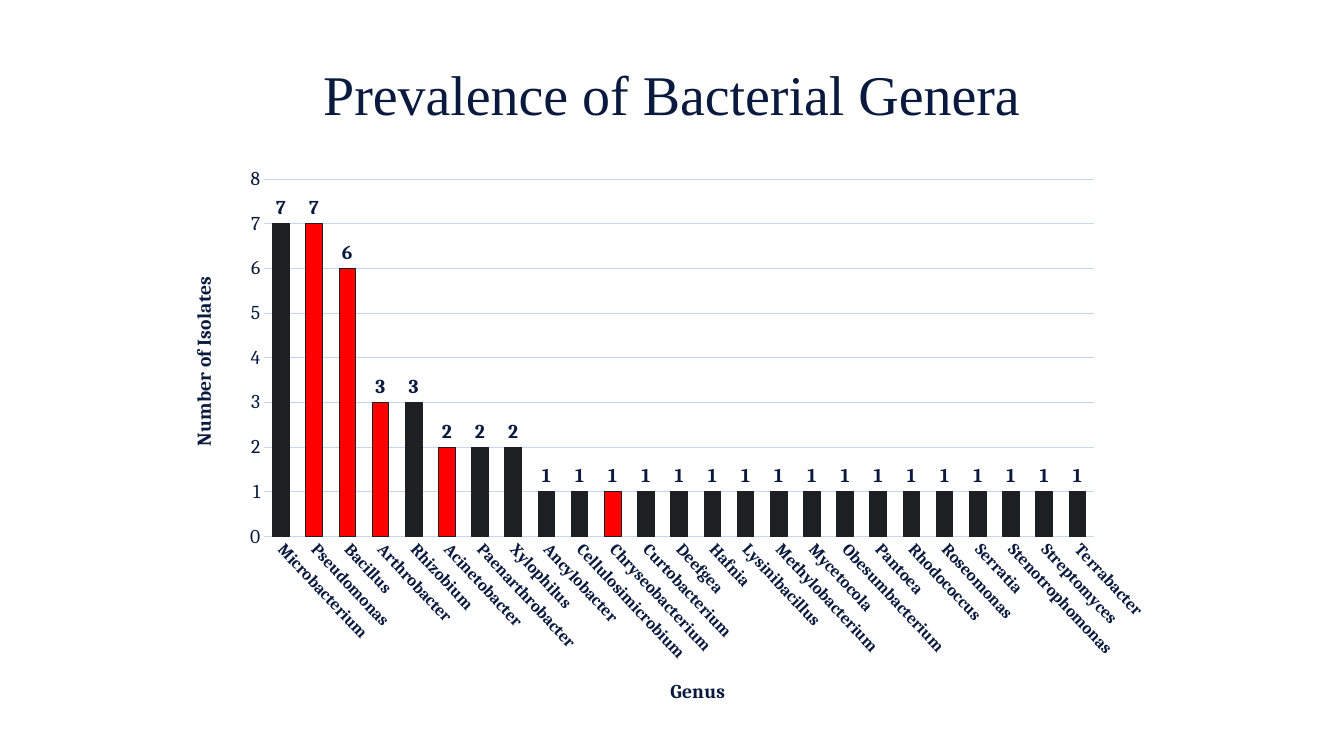
from dataclasses import dataclass

from lxml import etree
from pptx import Presentation
from pptx.chart.axis import CategoryAxis, ValueAxis
from pptx.chart.chart import Chart
from pptx.chart.data import CategoryChartData
from pptx.dml.color import RGBColor
from pptx.enum.chart import XL_CHART_TYPE, XL_LABEL_POSITION, XL_TICK_MARK
from pptx.enum.text import MSO_ANCHOR, PP_ALIGN
from pptx.oxml.ns import qn
from pptx.slide import Slide
from pptx.text.text import Font
from pptx.util import Cm, Pt

COLUMN_CLUSTERED = XL_CHART_TYPE.COLUMN_CLUSTERED
OUTSIDE_END = XL_LABEL_POSITION.OUTSIDE_END
NO_TICK = XL_TICK_MARK.NONE
MIDDLE = MSO_ANCHOR.MIDDLE
CENTER = PP_ALIGN.CENTER

COLORS = {"navy": "0A193E", "grid": "C6D4F6", "bar": "1E1F21", "highlight": "FF0000"}
LABEL_ROTATION = "2820000"  # 47 degrees clockwise


@dataclass(frozen=True)
class Genus:
    name: str
    isolates: int = 1
    highlighted: bool = False


GENERA = [
    Genus("Microbacterium", 7),
    Genus("Pseudomonas", 7, True),
    Genus("Bacillus", 6, True),
    Genus("Arthrobacter", 3, True),
    Genus("Rhizobium", 3),
    Genus("Acinetobacter", 2, True),
    Genus("Paenarthrobacter", 2),
    Genus("Xylophilus", 2),
    Genus("Ancylobacter"),
    Genus("Cellulosimicrobium"),
    Genus("Chryseobacterium", highlighted=True),
    Genus("Curtobacterium"),
    Genus("Deefgea"),
    Genus("Hafnia"),
    Genus("Lysinibacillus"),
    Genus("Methylobacterium"),
    Genus("Mycetocola"),
    Genus("Obesumbacterium"),
    Genus("Pantoea"),
    Genus("Rhodococcus"),
    Genus("Roseomonas"),
    Genus("Serratia"),
    Genus("Stenotrophomonas"),
    Genus("Streptomyces"),
    Genus("Terrabacter"),
]


def color(name: str) -> RGBColor:
    return RGBColor.from_string(COLORS[name])


def style_font(font: Font, size: float, bold: bool = False, name: str = "Cambria") -> None:
    font.name = name
    font.size = Pt(size)
    font.bold = bold
    font.color.rgb = color("navy")


def set_layout(parent: etree._Element, index: int, **fractions: float) -> None:
    """Place a chart part by fractions of the chart area."""
    for old_layout in parent.findall(qn("c:layout")):
        parent.remove(old_layout)
    layout = parent.makeelement(qn("c:layout"))
    manual = etree.SubElement(layout, qn("c:manualLayout"))
    settings = {"xMode": "edge", "yMode": "edge", **fractions}
    if "w" in fractions:
        settings = {"layoutTarget": "inner", **settings}
    for tag, value in settings.items():
        etree.SubElement(manual, qn(f"c:{tag}")).set("val", str(value))
    parent.insert(index, layout)


def add_axis_title(axis: CategoryAxis | ValueAxis, text: str, x: float, y: float) -> None:
    title = axis.axis_title
    paragraph = title.text_frame.paragraphs[0]
    paragraph.text = text
    style_font(paragraph.font, 14, bold=True)
    set_layout(title._element, 1, x=x, y=y)


def add_title(slide: Slide, text: str) -> None:
    shape = slide.shapes.add_textbox(Cm(1.69), Cm(0.76), Cm(30.48), Cm(3.18))
    text_frame = shape.text_frame
    text_frame.word_wrap = True
    text_frame.vertical_anchor = MIDDLE
    paragraph = text_frame.paragraphs[0]
    paragraph.text = text
    paragraph.alignment = CENTER
    style_font(paragraph.font, 40, name="Times New Roman")


def style_axes(chart: Chart) -> None:
    genus_axis, isolate_axis = chart.category_axis, chart.value_axis
    for axis in (genus_axis, isolate_axis):
        axis.major_tick_mark = axis.minor_tick_mark = NO_TICK

    style_font(genus_axis.tick_labels.font, 12, bold=True)
    body = genus_axis._element.find(qn("c:txPr")).find(qn("a:bodyPr"))
    body.set("rot", LABEL_ROTATION)
    body.set("vert", "horz")

    style_font(isolate_axis.tick_labels.font, 14)
    isolate_axis.minimum_scale, isolate_axis.maximum_scale = 0, 8
    isolate_axis.major_unit = 1
    isolate_axis.format.line.fill.background()
    for line in (genus_axis.format.line, isolate_axis.major_gridlines.format.line):
        line.color.rgb = color("grid")
        line.width = Pt(0.75)

    add_axis_title(genus_axis, "Genus", 0.495, 0.91)
    add_axis_title(isolate_axis, "Number of Isolates", 0.01, 0.205)


def style_bars(chart: Chart) -> None:
    plot = chart.plots[0]
    plot.gap_width = 100
    plot.overlap = -24
    plot.vary_by_categories = False
    series = plot.series[0]
    bars = [series] + [series.points[i] for i, genus in enumerate(GENERA) if genus.highlighted]
    for bar in bars:
        bar.format.fill.solid()
        bar.format.fill.fore_color.rgb = color("bar" if bar is series else "highlight")
        bar.format.line.color.rgb = color("bar")
        bar.format.line.width = Pt(0.75)

    labels = series.data_labels
    labels.show_value = True
    labels.position = OUTSIDE_END
    style_font(labels.font, 14, bold=True)


def add_genera_chart(slide: Slide) -> None:
    data = CategoryChartData()
    data.categories = [genus.name for genus in GENERA]
    data.add_series("Series 1", [genus.isolates for genus in GENERA])
    frame = slide.shapes.add_chart(
        COLUMN_CLUSTERED, Cm(4.47), Cm(3.94), Cm(24.92), Cm(14.35), data
    )
    chart = frame.chart
    chart.has_title = False
    chart.has_legend = False
    style_font(chart.font, 10)
    style_axes(chart)
    style_bars(chart)
    plot_area = chart._chartSpace.find(qn("c:chart")).find(qn("c:plotArea"))
    set_layout(plot_area, 0, x=0.088, y=0.04, w=0.839, h=0.628)


def main() -> None:
    presentation = Presentation()
    presentation.slide_width = Cm(33.87)
    presentation.slide_height = Cm(19.05)
    slide = presentation.slides.add_slide(presentation.slide_layouts[6])
    add_title(slide, "Prevalence of Bacterial Genera")
    add_genera_chart(slide)
    presentation.save("out.pptx")


if __name__ == "__main__":
    main()
